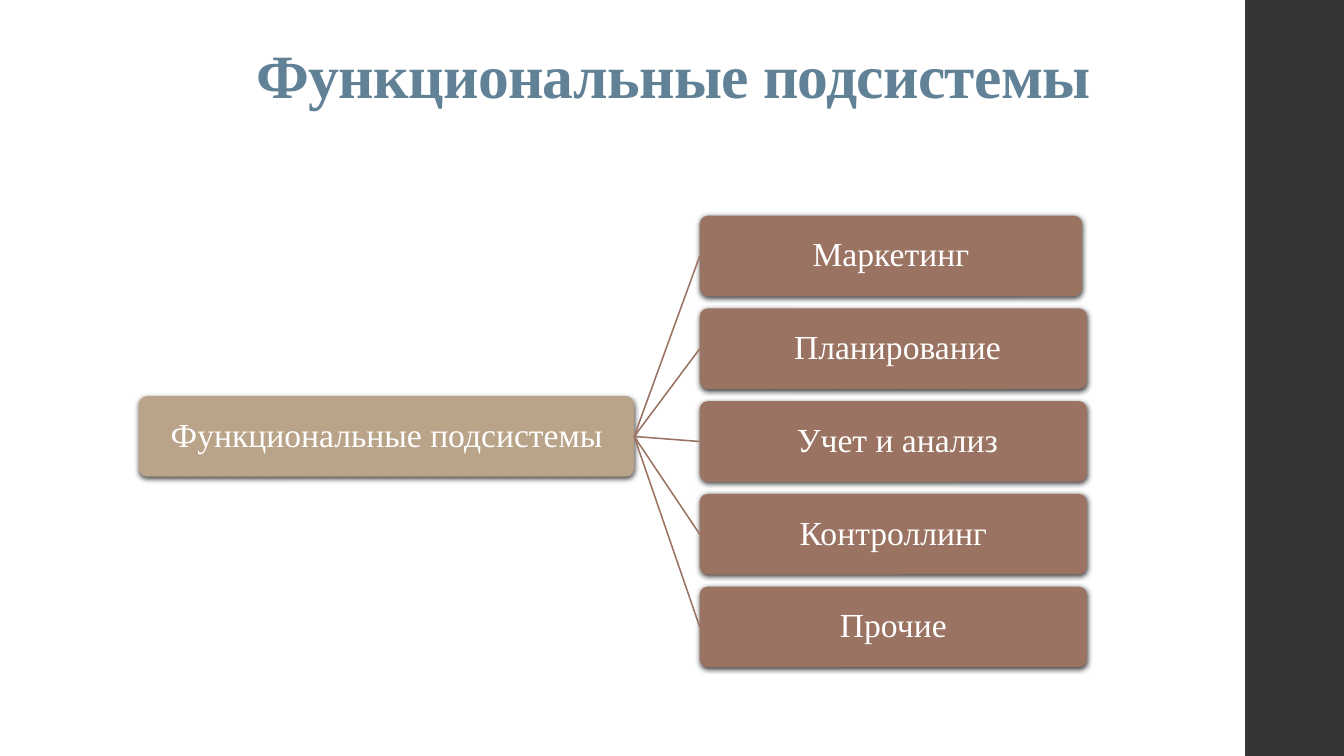
from dataclasses import dataclass

from lxml import etree
from pptx import Presentation
from pptx.dml.color import RGBColor
from pptx.enum.shapes import MSO_CONNECTOR, MSO_SHAPE
from pptx.enum.text import MSO_ANCHOR, PP_ALIGN
from pptx.oxml import parse_xml
from pptx.oxml.ns import nsdecls, qn
from pptx.util import Inches, Pt

RECT = MSO_SHAPE.RECTANGLE
ROUND = MSO_SHAPE.ROUNDED_RECTANGLE
STRAIGHT = MSO_CONNECTOR.STRAIGHT
TOP, MIDDLE = MSO_ANCHOR.TOP, MSO_ANCHOR.MIDDLE
CENTER = PP_ALIGN.CENTER
LEFT_SITE, RIGHT_SITE = 1, 3


@dataclass(frozen=True)
class Theme:
    font: str = "Times New Roman"
    title: RGBColor = RGBColor(0x61, 0x81, 0x97)
    band: RGBColor = RGBColor(0x35, 0x35, 0x37)
    root: RGBColor = RGBColor(0xB9, 0xA4, 0x89)
    leaf: RGBColor = RGBColor(0x9B, 0x73, 0x62)
    label: RGBColor = RGBColor(0xFF, 0xFF, 0xFF)
    title_size: Pt = Pt(44)
    label_size: Pt = Pt(24)
    line_width: Pt = Pt(1.1)


THEME = Theme()
ROOT = "Функциональные подсистемы"
LEAVES = ["Маркетинг", " Планирование", " Учет и анализ", "Контроллинг", "Прочие"]


def set_text(shape, text, size, color, anchor, bold=False):
    frame = shape.text_frame
    frame.text = text
    frame.word_wrap = True
    frame.vertical_anchor = anchor
    para = frame.paragraphs[0]
    para.alignment = CENTER
    para.line_spacing = 0.9
    font = para.runs[0].font
    font.name, font.size, font.bold = THEME.font, size, bold
    font.color.rgb = color


def add_block(slide, kind, box, color):
    shape = slide.shapes.add_shape(kind, *map(Inches, box))
    shape.shadow.inherit = False
    shape.fill.solid()
    shape.fill.fore_color.rgb = color
    shape.line.fill.background()
    return shape


def add_node(slide, box, text, color):
    node = add_block(slide, ROUND, box, color)
    node.adjustments[0] = 0.1
    frame = node.text_frame
    frame.margin_left = frame.margin_right = Inches(0.02)
    frame.margin_top = frame.margin_bottom = Inches(0.02)
    set_text(node, text, THEME.label_size, THEME.label, MIDDLE)
    # Soft shadow straight below the node
    effects = node._element.spPr.find(qn("a:effectLst"))
    effects.append(parse_xml(
        f'<a:outerShdw {nsdecls("a")} blurRad="{Pt(4)}" dist="{Pt(1.2)}" '
        'dir="5400000" rotWithShape="0"><a:srgbClr val="000000">'
        '<a:alpha val="75000"/></a:srgbClr></a:outerShdw>'))
    return node


def add_link(slide, start, end):
    link = slide.shapes.add_connector(STRAIGHT, 0, 0, 0, 0)
    link.begin_connect(start, RIGHT_SITE)
    link.end_connect(end, LEFT_SITE)
    link.line.color.rgb = THEME.leaf
    link.line.width = THEME.line_width
    etree.SubElement(link._element.spPr, qn("a:effectLst"))


def add_title(slide, box):
    title = slide.shapes.title
    title.left, title.top, title.width, title.height = map(Inches, box)
    set_text(title, ROOT, THEME.title_size, THEME.title, TOP, bold=True)
    title.text_frame.paragraphs[0].runs[0].font._element.set("spc", "-50")


def add_tree(slide, box):
    left, top, width, height = box
    node_h, root_w, gap = 0.8, 4.91, 0.65
    pitch = (height - node_h) / (len(LEAVES) - 1)
    root = add_node(slide, (left, top + 1.79, root_w, node_h), ROOT, THEME.root)
    leaf_x = left + root_w + gap
    leaf_w = width - root_w - gap
    for i, text in enumerate(LEAVES):
        # The first leaf is slightly narrower
        w = leaf_w - 0.05 if i == 0 else leaf_w
        leaf = add_node(slide, (leaf_x, top + i * pitch, w, node_h), text, THEME.leaf)
        add_link(slide, root, leaf)


def main():
    deck = Presentation()
    deck.slide_width, deck.slide_height = Inches(13.33), Inches(7.5)
    slide = deck.slides.add_slide(deck.slide_layouts[5])
    # Side band
    add_block(slide, RECT, (12.35, 0, 0.98, 7.5), THEME.band)
    # Heading
    add_title(slide, (1.38, 0.4, 10.6, 1.45))
    # Root and its subsystems
    add_tree(slide, (1.38, 2.14, 9.4, 4.48))
    deck.save("out.pptx")


if __name__ == "__main__":
    main()
